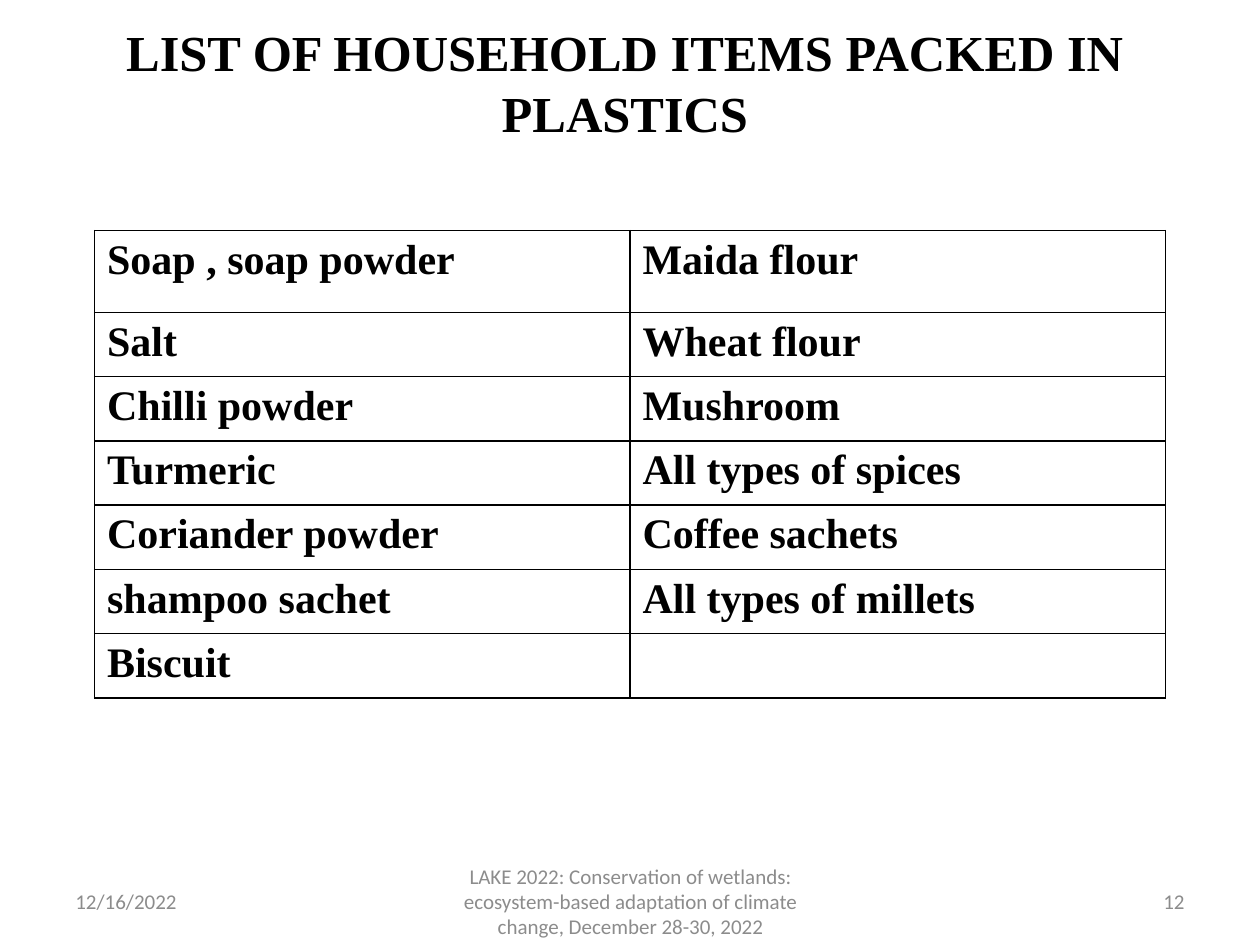
from lxml.etree import SubElement
from pptx import Presentation
from pptx.dml.color import RGBColor
from pptx.enum.text import MSO_ANCHOR, MSO_AUTO_SIZE, PP_ALIGN
from pptx.oxml.ns import qn
from pptx.util import Inches, Pt

HUES = {"ink": "000000", "note": "8C8C8C", "edge": "000000"}
SERIF, SANS = "Times New Roman", "Calibri"


def write(frame, text, size, face, hue, bold=False, align=PP_ALIGN.LEFT):
    para = frame.paragraphs[0]
    para.alignment = align
    run = para.add_run()
    run.text = text
    run.font.size = Pt(size)
    run.font.name = face
    run.font.bold = bold
    run.font.color.rgb = RGBColor.from_string(HUES[hue])


def border(cell):
    """Draw a one-point line on all four sides and leave the cell unfilled."""
    props = cell._tc.get_or_add_tcPr()
    for side in ("a:lnL", "a:lnR", "a:lnT", "a:lnB"):
        line = SubElement(props, qn(side), w=str(Pt(1)))
        fill = SubElement(line, qn("a:solidFill"))
        SubElement(fill, qn("a:srgbClr"), val=HUES["edge"])
    cell.fill.background()


deck = Presentation()
deck.slide_width, deck.slide_height = Inches(10), Inches(7.5)
slide = deck.slides.add_slide(deck.slide_layouts[5])

# Title
title = slide.shapes.title
title.left, title.top = Inches(0.5), Inches(0.3)
title.width, title.height = Inches(8.92), Inches(0.7)
frame = title.text_frame
frame.word_wrap = True
frame.auto_size = MSO_AUTO_SIZE.NONE
frame.vertical_anchor = MSO_ANCHOR.MIDDLE
write(frame, "LIST OF HOUSEHOLD ITEMS PACKED IN PLASTICS", 28.8, SERIF, "ink",
      True, PP_ALIGN.CENTER)

# Household items, two to a row
items = [
    ("Soap , soap powder", "Maida flour"),
    ("Salt", "Wheat flour"),
    ("Chilli powder", "Mushroom"),
    ("Turmeric", "All types of spices"),
    ("Coriander powder", "Coffee sachets"),
    ("shampoo sachet", "All types of millets"),
    ("Biscuit", ""),
]
first, rest = 0.65, 0.51
high = first + rest * (len(items) - 1)
table = slide.shapes.add_table(len(items), 2, Inches(0.75), Inches(1.83),
                               Inches(8.5), Inches(high)).table
table.first_row = table.horz_banding = False
for r, pair in enumerate(items):
    table.rows[r].height = Inches(rest if r else first)
    for c, item in enumerate(pair):
        cell = table.cell(r, c)
        border(cell)
        if item:
            write(cell.text_frame, item, 24, SERIF, "ink", True)

# Footer: date, event, page
event = ("LAKE 2022: Conservation of wetlands: ecosystem-based adaptation "
         "of climate change, December 28-30, 2022")
notes = [
    (0.5, 2.33, "12/16/2022", PP_ALIGN.LEFT),
    (3.42, 3.17, event, PP_ALIGN.CENTER),
    (7.17, 2.33, "12", PP_ALIGN.RIGHT),
]
for left, wide, text, align in notes:
    box = slide.shapes.add_textbox(Inches(left), Inches(6.95),
                                   Inches(wide), Inches(0.4))
    frame = box.text_frame
    frame.word_wrap = True
    frame.vertical_anchor = MSO_ANCHOR.MIDDLE
    write(frame, text, 12, SANS, "note", align=align)

deck.save("out.pptx")
